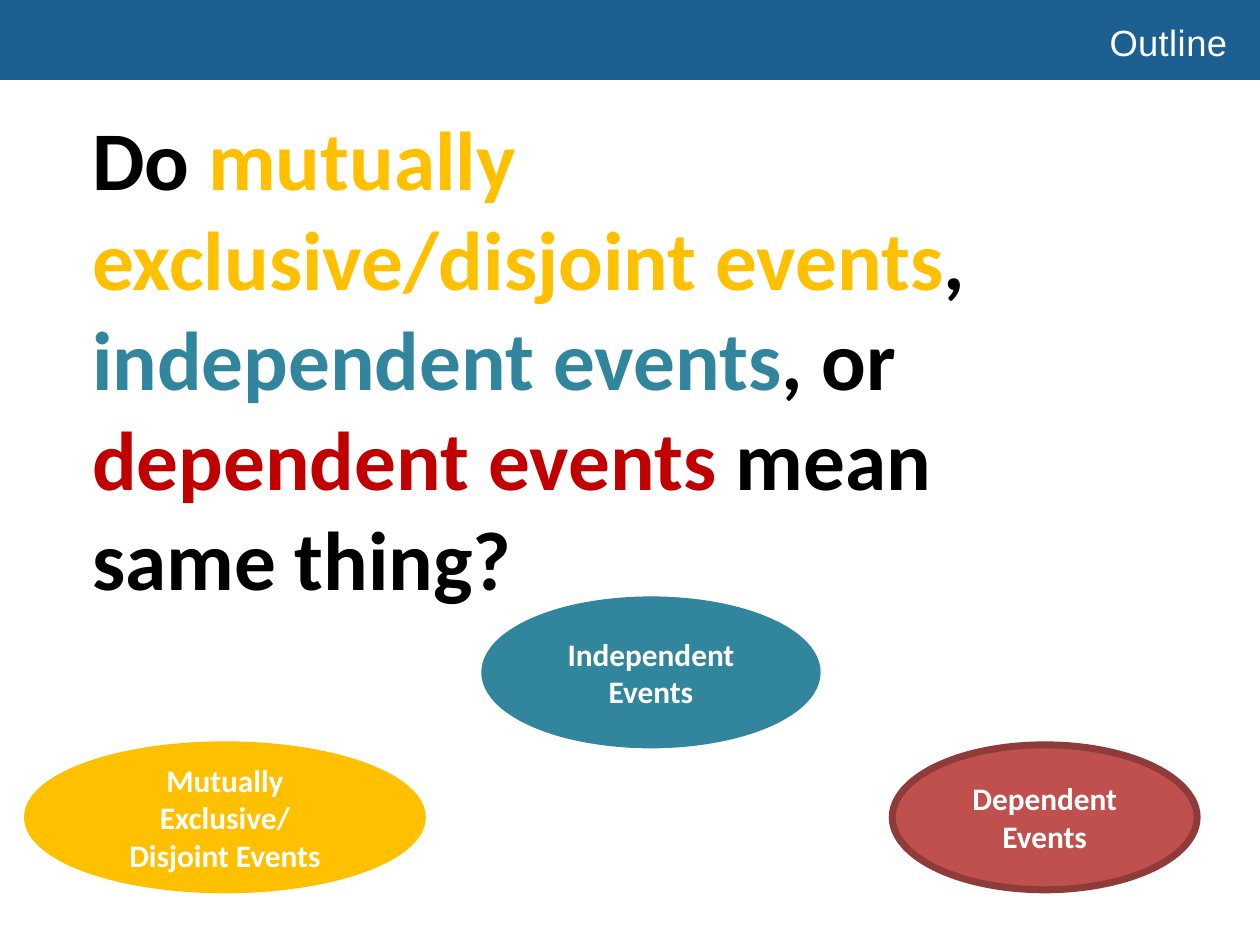
from pptx import Presentation
from pptx.dml.color import RGBColor
from pptx.enum.shapes import MSO_SHAPE
from pptx.enum.text import MSO_ANCHOR, PP_ALIGN
from pptx.util import Inches, Pt

COLORS = {
    "banner": "1B6090",
    "white": "FFFFFF",
    "black": "000000",
    "disjoint": "FFC000",
    "independent": "31859C",
    "dependent": "C00000",
    "dependent_fill": "C0504D",
    "dependent_edge": "8E3B39",
}

QUESTION = [
    ("Do ", "black"),
    ("mutually exclusive/disjoint events", "disjoint"),
    (", ", "black"),
    ("independent events", "independent"),
    (", or ", "black"),
    ("dependent events ", "dependent"),
    ("mean same thing?", "black"),
]

# label, fill, edge, (left, top, width, height)
EVENT_KINDS = [
    ("Independent Events", "independent", "independent", (1.94, 2.4, 1.33, 0.58)),
    ("Mutually Exclusive/ Disjoint Events", "disjoint", "disjoint", (0.11, 2.98, 1.58, 0.58)),
    ("Dependent Events", "dependent_fill", "dependent_edge", (3.57, 2.98, 1.22, 0.58)),
]


def color(name):
    return RGBColor.from_string(COLORS[name])


def set_font(font, name, size, bold=False):
    font.name, font.size, font.bold = name, Pt(size), bold


def add_banner(page, box):
    left, top, width, height = map(Inches, box)
    outline = page.shapes.build_freeform(left, top + height)
    outline.add_line_segments([
        (left + width, top + height),
        (left + width, top),
        (left, top),
    ])
    banner = outline.convert_to_shape()
    banner.shadow.inherit = False
    banner.fill.solid()
    banner.fill.fore_color.rgb = color("banner")
    banner.line.fill.background()

    title = page.shapes.title
    page.shapes._spTree.append(title._element)  # bring the title in front of the banner
    title.left, title.top = left + Inches(0.11), top + Inches(0.06)
    title.width, title.height = width - Inches(0.21), Inches(0.21)
    frame = title.text_frame
    frame.vertical_anchor = MSO_ANCHOR.TOP
    frame.margin_left, frame.margin_top = Inches(4.33), Inches(0.02)
    frame.margin_right = frame.margin_bottom = 0
    para = frame.paragraphs[0]
    para.alignment = PP_ALIGN.LEFT
    para.space_before = Pt(1.4)
    set_font(para.font, "Arial", 10.5)
    para.font.color.rgb = color("white")
    span = para.add_run()
    span.text = "Outline"
    span._r.get_or_add_rPr().set("spc", "15")


def add_question(page, box):
    frame = page.shapes.add_textbox(*map(Inches, box)).text_frame
    frame.word_wrap = True
    para = frame.paragraphs[0]
    set_font(para.font, "Calibri", 24, bold=True)
    for text, shade in QUESTION:
        span = para.add_run()
        span.text = text
        span.font.color.rgb = color(shade)


def add_event_ellipse(page, label, fill, edge, box):
    ellipse = page.shapes.add_shape(MSO_SHAPE.OVAL, *map(Inches, box))
    ellipse.shadow.inherit = False
    ellipse.fill.solid()
    ellipse.fill.fore_color.rgb = color(fill)
    ellipse.line.color.rgb = color(edge)
    ellipse.line.width = Pt(2)
    frame = ellipse.text_frame
    frame.word_wrap = True
    frame.vertical_anchor = MSO_ANCHOR.MIDDLE
    para = frame.paragraphs[0]
    para.text = label
    para.alignment = PP_ALIGN.CENTER
    set_font(para.font, "Calibri", 9, bold=True)
    para.font.color.rgb = color("white")


def main():
    deck = Presentation()
    deck.slide_width, deck.slide_height = Pt(363), Pt(272.5)
    page = deck.slides.add_slide(deck.slide_layouts[5])
    add_banner(page, (0, 0, 5.04, 0.32))
    add_question(page, (0.27, 0.38, 4.08, 2.12))
    for event_kind in EVENT_KINDS:
        add_event_ellipse(page, *event_kind)
    deck.save("out.pptx")


if __name__ == "__main__":
    main()
